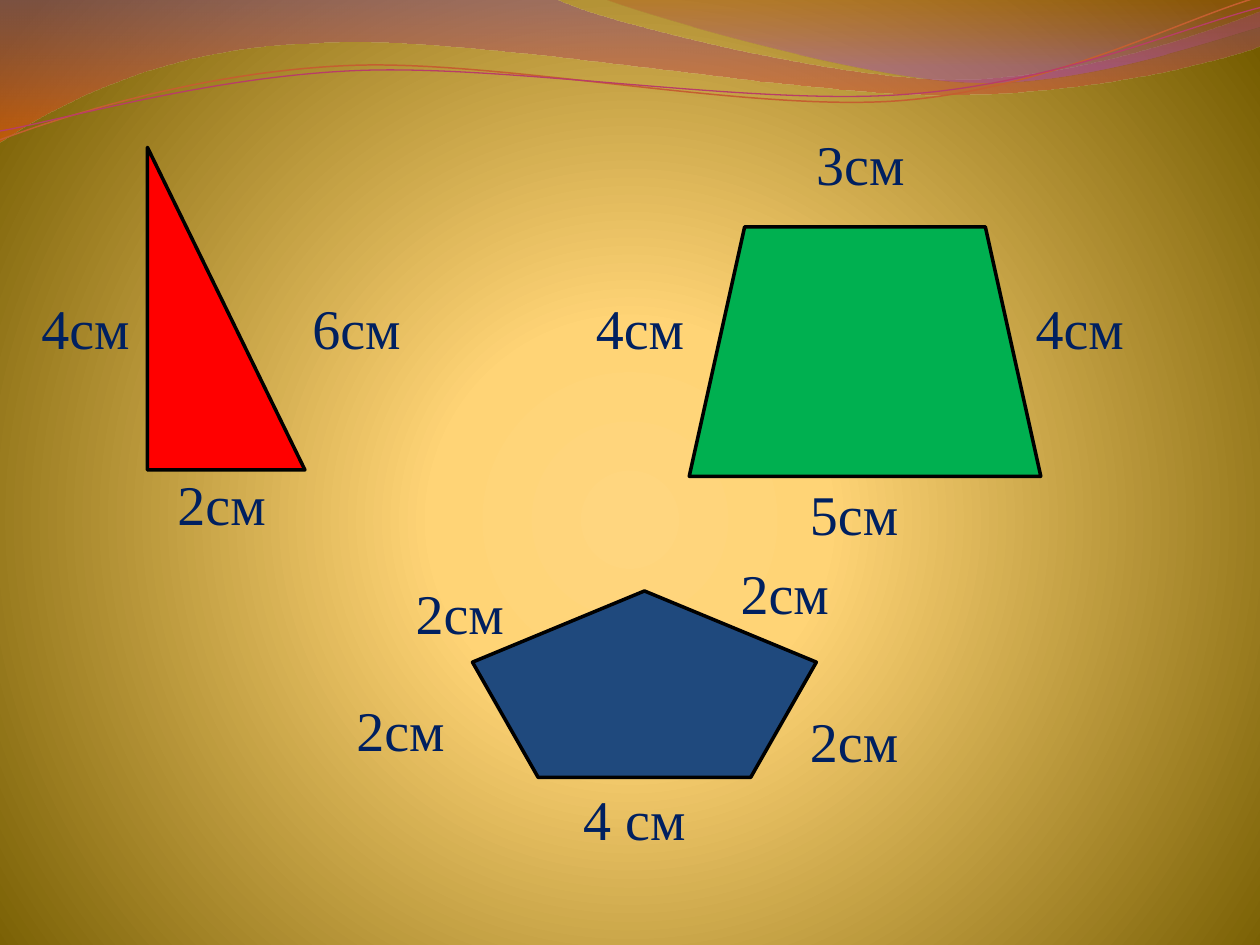
from math import cos, radians, sin

from pptx import Presentation
from pptx.dml.color import RGBColor
from pptx.enum.shapes import MSO_SHAPE
from pptx.enum.text import MSO_ANCHOR
from pptx.oxml import parse_xml
from pptx.oxml.ns import nsdecls, qn
from pptx.util import Inches, Pt

NAVY = RGBColor(0x00, 0x20, 0x60)
BLACK = RGBColor(0x00, 0x00, 0x00)
RED = RGBColor(0xFF, 0x00, 0x00)
GREEN = RGBColor(0x00, 0xB0, 0x50)
BLUE = RGBColor(0x1F, 0x49, 0x7D)
ORANGE = RGBColor(0xC4, 0x5F, 0x30)
PINK = RGBColor(0xB8, 0x3D, 0x68)
FONT, SIZE = "Times New Roman", 32
TILT, PIVOT = -2.7, (4.99, 0.58)

DOWN = '<a:lin ang="5400000" scaled="0"/>'
RADIAL = '<a:path path="circle"><a:fillToRect l="10000" t="110000" r="10000" b="100000"/></a:path>'
BACKDROP = [(0, "FFD67F", 100), (25, "FFD476", 100), (100, "755C00", 100)]

BANDS = [
    ([(0, 0), (4.4, -0.01), (4.76, 0.17, 6.64, 0.63, 7.58, 0.63),
      (8.53, 0.63, 9.58, 0.26, 10, 0.09), (10.01, 0.36),
      (9.83, 0.44, 8.7, 0.76, 7.46, 0.75), (6.22, 0.75, 3.82, 0.28, 2.57, 0.34),
      (1.29, 0.36, 0.46, 0.83, -0.01, 1.13)],
     [(0, "834591", 45), (100, "F35307", 55)]),
    ([(4.79, -0.01), (5.09, 0.11, 6.82, 0.62, 7.69, 0.65),
      (8.56, 0.69, 9.61, 0.32, 10, 0.21), (10, 0)],
     [(0, "B74915", 30), (80, "A14BB4", 45)]),
]
STRANDS = [
    ([(0, 1.11), (0.48, 0.93, 1.58, 0.57, 2.77, 0.52),
      (3.95, 0.47, 5.93, 0.89, 7.13, 0.8), (8.33, 0.71, 9.38, 0.15, 9.98, -0.02)], ORANGE, 0.85),
    ([(0, 1.04), (0.47, 0.96, 1.64, 0.61, 2.83, 0.56),
      (4.03, 0.51, 5.97, 0.84, 7.17, 0.75), (8.36, 0.67, 9.41, 0.21, 10, 0.06)], PINK, 0.75),
]
TRAPEZOID = [(5.47, 3.78), (5.91, 1.8), (7.82, 1.8), (8.26, 3.78)]
TRIANGLE_BOX = (1.17, 1.17, 1.25, 2.56)
PENTAGON_BOX = (3.75, 4.69, 2.73, 1.48)

SIDE_ROW = ["4см", "6см", "4см", "4см"]
SIDE_BOX = (0.23, 1.87, 9.22, 1.04)
SIDE_TABS = [2.15, 4.4, 7.89]
LABELS = [
    ("3см", (6.02, 0.94, 1.56, 0.71), 0.36), ("2см", (1.09, 3.67, 1.41, 0.64), 0.22),
    ("2см", (5.78, 4.38, 1.41, 0.64), 0), ("2см", (2.73, 5.47, 1.41, 0.64), 0),
    ("2см", (6.33, 5.55, 1.41, 0.64), 0), ("4 см", (4.53, 6.17, 1.41, 0.64), 0),
    ("5см", (6.33, 3.75, 1.41, 0.64), 0), ("2см", (3.2, 4.54, 1.34, 0.64), 0),
]


def set_gradient(fill, element, stops, direction):
    """Give a fill its colour stops, opacity and direction."""
    fill.gradient()
    old = element.find(".//" + qn("a:gradFill"))
    gs = "".join(
        f'<a:gs pos="{pos * 1000}"><a:srgbClr val="{color}"><a:alpha val="{alpha * 1000}"/>'
        "</a:srgbClr></a:gs>" for pos, color, alpha in stops)
    old.getparent().replace(old, parse_xml(
        f'<a:gradFill {nsdecls("a")} rotWithShape="1"><a:gsLst>{gs}</a:gsLst>{direction}</a:gradFill>'))


def pairs(seg):
    """Split a flat segment into points."""
    return list(zip(seg[::2], seg[1::2]))


def level(path):
    """Undo the tilt of a strand about its pivot."""
    c, d = cos(radians(-TILT)), sin(radians(-TILT))
    px, py = PIVOT
    return [[v for x, y in pairs(seg)
             for v in (px + (x - px) * c - (y - py) * d, py + (x - px) * d + (y - py) * c)]
            for seg in path]


def add_outline(s, path, close):
    """Draw a freeform whose six-number segments are cubic curves."""
    ends = [(Inches(seg[-2]), Inches(seg[-1])) for seg in path]
    builder = s.shapes.build_freeform(*ends[0])
    builder.add_line_segments(ends[1:], close=close)
    sp = builder.convert_to_shape()
    sp.shadow.inherit = False
    for seg, line in zip(path[1:], sp.element.findall(".//" + qn("a:lnTo"))):
        if len(seg) == 6:
            pts = "".join(f'<a:pt x="{Inches(x) - sp.left}" y="{Inches(y) - sp.top}"/>'
                          for x, y in pairs(seg))
            line.getparent().replace(line, parse_xml(
                f'<a:cubicBezTo {nsdecls("a")}>{pts}</a:cubicBezTo>'))
    return sp


def paint(sp, color):
    """Fill a figure and outline it in black."""
    sp.shadow.inherit = False
    sp.fill.solid()
    sp.fill.fore_color.rgb = color
    sp.line.color.rgb = BLACK
    sp.line.width = Pt(2)


def add_label(s, text, box, anchor=MSO_ANCHOR.MIDDLE):
    """Write side lengths and return the paragraph properties."""
    tf = s.shapes.add_textbox(*map(Inches, box)).text_frame
    tf.word_wrap = True
    tf.vertical_anchor = anchor
    p = tf.paragraphs[0]
    r = p.add_run()
    r.text = text
    r.font.name, r.font.size = FONT, Pt(SIZE)
    r.font.color.rgb = NAVY
    return p._p.get_or_add_pPr()


def main():
    """Build the slide of figures and their side lengths."""
    prs = Presentation()
    prs.slide_width, prs.slide_height = Inches(10), Inches(7.5)
    s = prs.slides.add_slide(prs.slide_layouts[6])
    set_gradient(s.background.fill, s.element, BACKDROP, RADIAL)

    for path, stops in BANDS:
        sp = add_outline(s, path, True)
        set_gradient(sp.fill, sp.element, stops, DOWN)
        sp.line.fill.background()
    for path, color, width in STRANDS:
        sp = add_outline(s, level(path), False)
        sp.rotation = TILT
        sp.fill.background()
        sp.line.color.rgb = color
        sp.line.width = Pt(width)

    paint(s.shapes.add_shape(MSO_SHAPE.RIGHT_TRIANGLE, *map(Inches, TRIANGLE_BOX)), RED)
    paint(add_outline(s, TRAPEZOID, True), GREEN)
    paint(s.shapes.add_shape(MSO_SHAPE.REGULAR_PENTAGON, *map(Inches, PENTAGON_BOX)), BLUE)

    props = add_label(s, "\t".join(SIDE_ROW), SIDE_BOX, MSO_ANCHOR.BOTTOM)
    stops = "".join(f'<a:tab pos="{Inches(x)}" algn="l"/>' for x in SIDE_TABS)
    props.append(parse_xml(f'<a:tabLst {nsdecls("a")}>{stops}</a:tabLst>'))
    for text, box, indent in LABELS:
        add_label(s, text, box).set("marL", str(Inches(indent)))

    prs.save("out.pptx")


if __name__ == "__main__":
    main()
